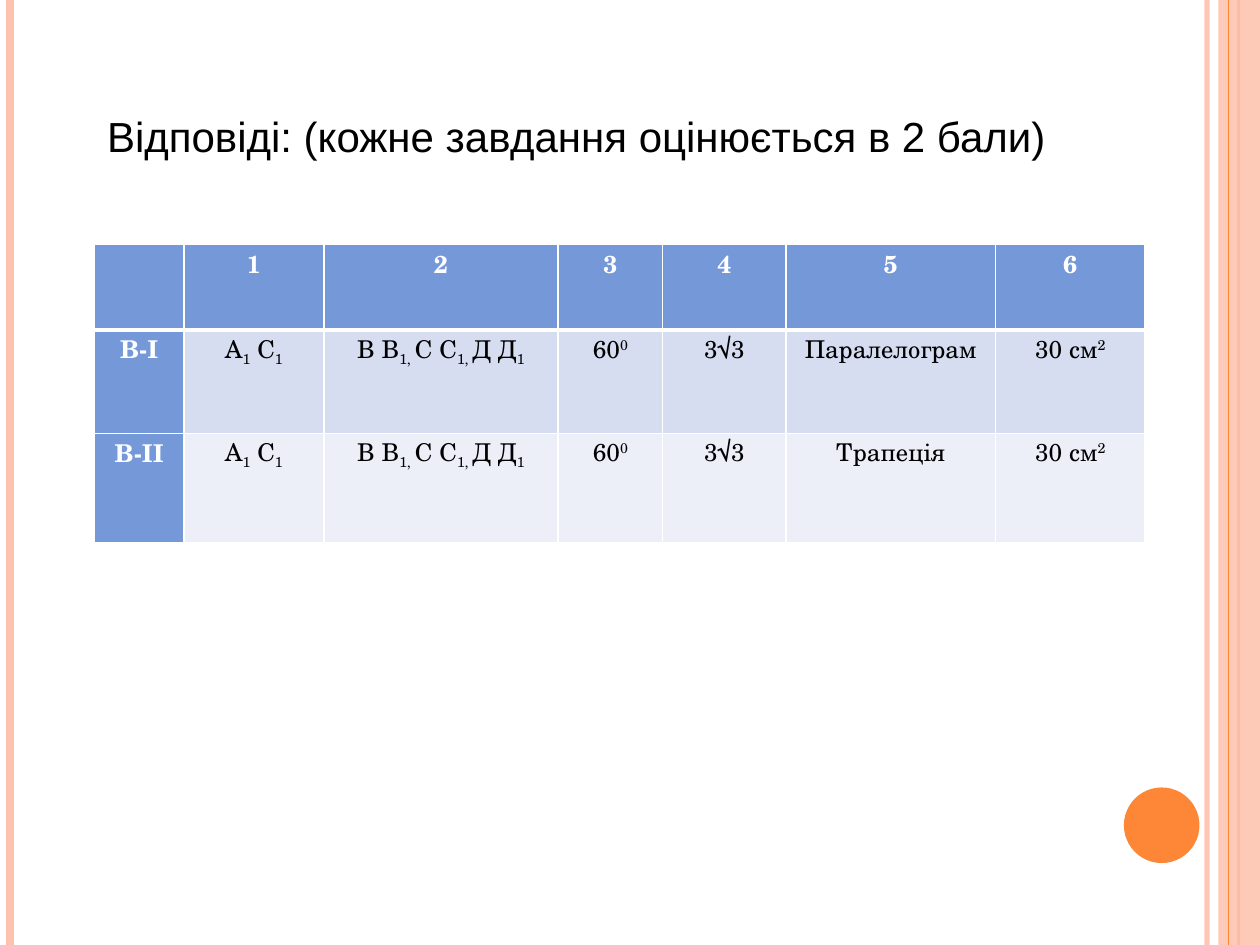
from dataclasses import dataclass

from lxml.etree import SubElement
from pptx import Presentation
from pptx.dml.color import RGBColor as RGB
from pptx.enum.shapes import MSO_CONNECTOR as Conn, MSO_SHAPE as Shape
from pptx.enum.text import MSO_ANCHOR as Anchor, PP_ALIGN as Align
from pptx.oxml.ns import qn
from pptx.util import Inches, Pt


@dataclass(frozen=True)
class Theme:
    white: str = "FFFFFF"
    black: str = "000000"
    peach: str = "FEC3AE"
    orange: str = "FE8637"
    header: str = "7598D9"
    bands: tuple = ("D6DDF1", "ECEFF8")
    title_font: str = "Arial"
    table_font: str = "TeX Gyre Schola"
    title_size: int = 24
    table_size: int = 14


SUB, SUP = -25000, 30000
ONE, ONE_COMMA, SQUARE = ("1", SUB), ("1, ", SUB), ("2", SUP)
VERTICES = ["А", ONE, " С", ONE]
EDGES = ["В В", ONE_COMMA, "С С", ONE_COMMA, "Д Д", ONE]
ANGLE = ["60", ("0", SUP)]
AREA = ["30 см", SQUARE]

ANSWERS = [
    ["", "1", "2", "3", "4", "5", "6"],
    ["В-І", VERTICES, EDGES, ANGLE, "3√3", "Паралелограм", AREA],
    ["В-ІІ", VERTICES, EDGES, ANGLE, "3√3", "Трапеція", AREA],
]
COL_WIDTHS = [0.71, 1.11, 1.86, 0.83, 0.98, 1.66, 1.19]
ROW_HEIGHTS = [0.68, 0.82, 0.87]


def write(tf, text, *, font, size, color, bold=False, align=Align.LEFT):
    """Fill the first paragraph; text is a string or a list of strings and (string, baseline) pairs."""
    p = tf.paragraphs[0]
    p.alignment = align
    for part in [text] if isinstance(text, str) else text:
        content, baseline = (part, 0) if isinstance(part, str) else part
        r = p.add_run()
        r.text = content
        r.font.name, r.font.size, r.font.bold = font, Pt(size), bold
        r.font.color.rgb = RGB.from_string(color)
        if baseline:
            r._r.get_or_add_rPr().set("baseline", str(baseline))


def set_opacity(sp, percent):
    for color in sp._element.spPr.iter(qn("a:srgbClr")):
        SubElement(color, qn("a:alpha")).set("val", str(percent * 1000))


def set_borders(cell, color, **widths):
    """Draw the cell's borders; widths in points are keyed L, R, T and B."""
    tc_pr = cell._tc.get_or_add_tcPr()
    for i, (side, width) in enumerate(widths.items()):
        ln = SubElement(tc_pr, qn(f"a:ln{side}"), w=str(Pt(width)))
        fill = SubElement(ln, qn("a:solidFill"))
        SubElement(fill, qn("a:srgbClr")).set("val", color)
        tc_pr.insert(i, ln)


class SlideBuilder:
    def __init__(self, prs, theme):
        self.theme = theme
        self.slide = prs.slides.add_slide(prs.slide_layouts[5])
        bg = self.slide.background.fill
        bg.solid()
        bg.fore_color.rgb = RGB.from_string(theme.white)

    def title(self, text, left, top, width, height):
        sp = self.slide.shapes.title
        sp.left, sp.top = Inches(left), Inches(top)
        sp.width, sp.height = Inches(width), Inches(height)
        tf = sp.text_frame
        tf.word_wrap = False
        tf.vertical_anchor = Anchor.MIDDLE
        write(tf, text, font=self.theme.title_font, size=self.theme.title_size,
              color=self.theme.black)

    def vertical_line(self, x, color, width, opacity=100):
        line = self.slide.shapes.add_connector(
            Conn.STRAIGHT, Inches(x), 0, Inches(x), Inches(7.5))
        line.line.color.rgb = RGB.from_string(color)
        line.line.width = Pt(width)
        SubElement(line._element.spPr, qn("a:effectLst"))
        if opacity < 100:
            set_opacity(line, opacity)

    def shape(self, kind, left, top, width, height, color, opacity=100):
        sp = self.slide.shapes.add_shape(
            kind, Inches(left), Inches(top), Inches(width), Inches(height))
        sp.shadow.inherit = False
        sp.fill.solid()
        sp.fill.fore_color.rgb = RGB.from_string(color)
        sp.line.fill.background()
        if opacity < 100:
            set_opacity(sp, opacity)

    def table(self, rows, left, top, col_widths, row_heights):
        table = self.slide.shapes.add_table(
            len(rows), len(col_widths), Inches(left), Inches(top),
            Inches(sum(col_widths)), Inches(sum(row_heights))).table
        table.first_row = table.horz_banding = False
        for col, width in zip(table.columns, col_widths):
            col.width = Inches(width)
        for row, height in zip(table.rows, row_heights):
            row.height = Inches(height)
        for i, row in enumerate(rows):
            for j, text in enumerate(row):
                self.cell(table.cell(i, j), text, i, j)

    def cell(self, cell, text, row, col):
        theme = self.theme
        heading = row == 0 or col == 0
        cell.margin_left = cell.margin_right = Inches(0.07)
        cell.margin_top = cell.margin_bottom = 0
        cell.fill.solid()
        cell.fill.fore_color.rgb = RGB.from_string(
            theme.header if heading else theme.bands[row - 1])
        set_borders(cell, theme.white, L=1, R=1,
                    T=3 if row == 1 else 1, B=3 if row == 0 else 1)
        if text:
            write(cell.text_frame, text, font=theme.table_font, size=theme.table_size,
                  color=theme.white if heading else theme.black,
                  bold=heading, align=Align.CENTER)


def main():
    prs = Presentation()
    prs.slide_width, prs.slide_height = Inches(10), Inches(7.5)
    theme = Theme()
    s = SlideBuilder(prs, theme)

    s.vertical_line(9.58, theme.peach, 3, opacity=93)
    s.vertical_line(0.08, theme.peach, 4.5)
    s.vertical_line(9.83, theme.orange, 1.5)
    s.shape(Shape.RECTANGLE, 9.67, 0, 0.33, 7.5, theme.peach, opacity=87)
    s.vertical_line(9.75, theme.orange, 0.75)
    s.shape(Shape.OVAL, 8.92, 6.25, 0.6, 0.6, theme.orange)

    s.table(ANSWERS, 0.75, 1.94, COL_WIDTHS, ROW_HEIGHTS)
    s.title("Відповіді: (кожне завдання оцінюється в 2 бали)", 0.75, 0.83, 7.73, 0.5)
    prs.save("out.pptx")


if __name__ == "__main__":
    main()
